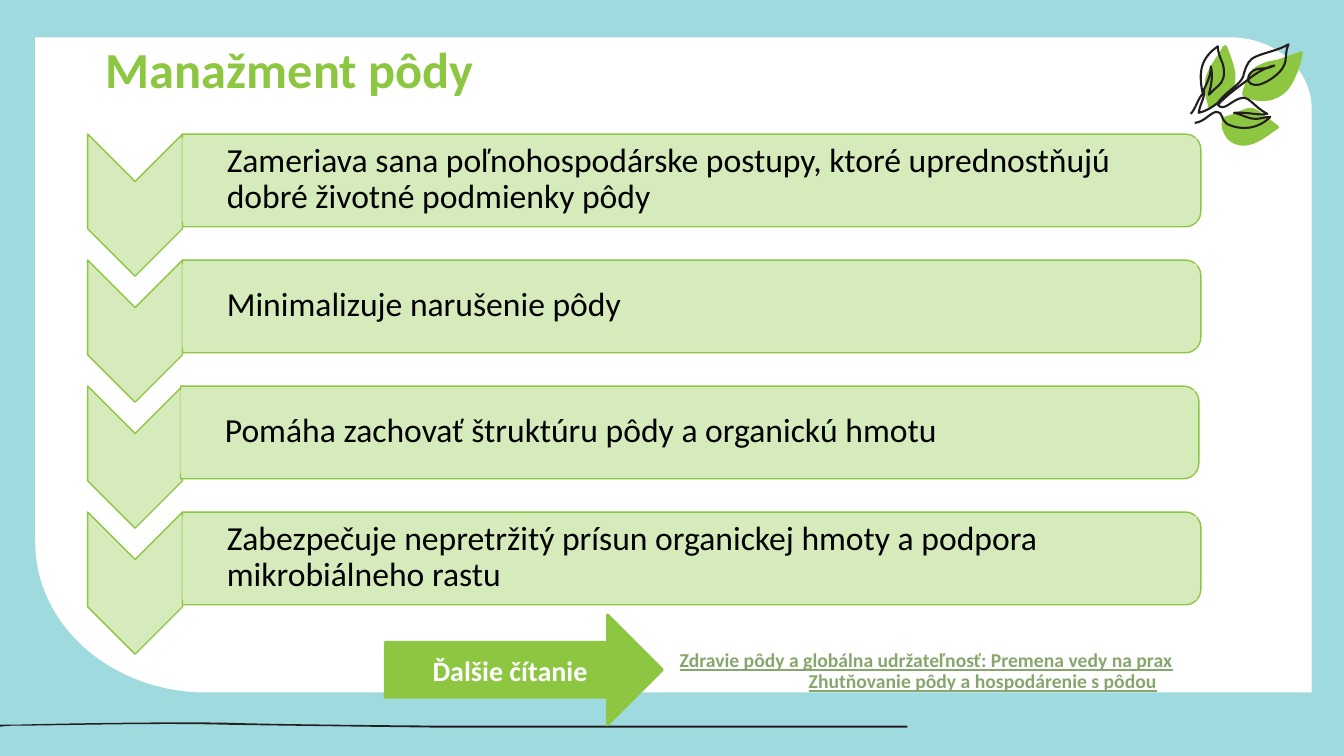
import pptx
import pptx.dml.color
import pptx.enum.shapes
import pptx.enum.text
import pptx.oxml.ns
import pptx.util
from dataclasses import dataclass
from lxml import etree

EMU_PER_PX = 9144
SHAPES = pptx.enum.shapes.MSO_SHAPE
ANCHOR = pptx.enum.text.MSO_ANCHOR
ALIGN = pptx.enum.text.PP_ALIGN


@dataclass(frozen=True)
class Theme:
    """Colours, font and type sizes of the slide."""
    sky: str = "9FDADF"
    paper: str = "FFFFFF"
    ink: str = "231F20"
    leaf: str = "8DC641"
    pale: str = "D6EBBB"
    text: str = "000000"
    link: str = "87A66E"
    font: str = "Calibri"
    title_size: int = 36
    step_size: int = 24
    arrow_size: int = 20
    link_size: int = 14
    stroke: float = 1.5


THEME = Theme()

PANEL = ((35, 37), [
    (1220, 37), (1265, 37, 1301, 69, 1301, 108), (1301, 687), (205, 687),
    (111, 687, 35, 620, 35, 538)])
WAVE = ((900, 722), [
    (443, 722), (441, 722, 280, 720, 223, 719), (155, 717, 52, 720, 14, 720),
    (6, 720, 1, 721, 0, 721), (0, 719), (1, 719, 6, 719, 14, 719),
    (52, 718, 155, 716, 223, 717), (281, 719, 441, 720, 443, 720), (900, 720)])
LEAVES = [
    ((1203, 106), [
        (1213, 101, 1224, 93, 1225, 82), (1227, 70, 1221, 57, 1217, 46),
        (1216, 44, 1214, 45, 1213, 46), (1210, 52, 1206, 57, 1203, 62),
        (1200, 66, 1198, 71, 1196, 76), (1194, 85, 1195, 95, 1198, 104),
        (1197, 106, 1198, 108, 1200, 107)]),
    ((1272, 94), [
        (1278, 90, 1282, 83, 1285, 76), (1288, 69, 1291, 61, 1292, 53),
        (1293, 51, 1291, 50, 1290, 51), (1283, 54, 1275, 56, 1268, 59),
        (1262, 60, 1255, 61, 1250, 64), (1244, 66, 1241, 70, 1238, 75),
        (1236, 81, 1233, 87, 1232, 93), (1232, 95, 1233, 96, 1234, 96),
        (1246, 102, 1261, 102, 1272, 94)]),
    ((1267, 128), [
        (1269, 127, 1269, 126, 1268, 125), (1263, 121, 1258, 117, 1252, 113),
        (1249, 110, 1245, 107, 1240, 107), (1236, 107, 1232, 109, 1228, 111),
        (1225, 112, 1221, 114, 1217, 115), (1214, 116, 1210, 117, 1212, 121),
        (1211, 124, 1212, 128, 1213, 130), (1215, 136, 1219, 141, 1225, 143),
        (1241, 149, 1255, 136, 1267, 128)]),
]
STEM = ((1181, 113), [
    (1186, 108, 1188, 98, 1193, 93), (1188, 70, 1192, 57, 1208, 46),
    (1208, 53, 1210, 55, 1211, 59), (1213, 63, 1214, 67, 1214, 72),
    (1214, 81, 1210, 84, 1204, 89), (1202, 91, 1201, 92, 1199, 94),
    (1202, 82, 1203, 74, 1201, 66), (1201, 74, 1198, 81, 1194, 89),
    (1196, 96, 1190, 103, 1189, 112), (1197, 110, 1203, 106, 1208, 102),
    (1218, 88, 1233, 84, 1234, 72), (1237, 63, 1239, 59, 1246, 56),
    (1255, 52, 1268, 50, 1278, 44), (1274, 53, 1277, 59, 1273, 66),
    (1270, 73, 1257, 82, 1249, 84), (1242, 85, 1238, 83, 1238, 78),
    (1239, 70, 1246, 68, 1252, 68), (1256, 68, 1260, 67, 1264, 65),
    (1255, 67, 1245, 73, 1238, 79), (1226, 88, 1216, 95, 1208, 104),
    (1214, 112, 1222, 98, 1233, 97), (1240, 97, 1245, 107, 1257, 113),
    (1247, 115, 1240, 111, 1224, 112), (1233, 114, 1238, 118, 1245, 118),
    (1250, 118, 1255, 116, 1260, 116), (1248, 128, 1232, 130, 1217, 123),
    (1211, 119, 1213, 111, 1207, 111), (1201, 111, 1195, 121, 1185, 122)])
STEPS = [
    ("Zameriava sana poľnohospodárske postupy, ktoré uprednostňujú dobré životné podmienky pôdy", 0),
    ("Minimalizuje narušenie pôdy", 0),
    ("Pomáha zachovať štruktúru pôdy a organickú hmotu", -2),
    ("Zabezpečuje nepretržitý prísun organickej hmoty a podpora mikrobiálneho rastu", 0),
]
LINKS = [
    ("Zdravie pôdy a globálna udržateľnosť: Premena vedy na prax", 25),
    ("Zhutňovanie pôdy a hospodárenie s pôdou", 153),
]


def px(length):
    """Turn pixels into EMU."""
    return pptx.util.Emu(round(length * EMU_PER_PX))


def rgb(colour):
    """Turn a hex string into a colour."""
    return pptx.dml.color.RGBColor.from_string(colour)


def paint(shape, fill=None, line=None, width=1):
    """Set fill and outline, leaving out what is not given."""
    shape.shadow.inherit = False
    if fill:
        shape.fill.solid()
        shape.fill.fore_color.rgb = rgb(fill)
    else:
        shape.fill.background()
    if line:
        shape.line.color.rgb = rgb(line)
        shape.line.width = pptx.util.Pt(width)
    else:
        shape.line.fill.background()


def draw_outline(slide, outline, fill=None, line=None):
    """Draw a freeform from line ends and cubic curves."""
    start, segments = outline
    points = [pair for segment in segments for pair in zip(segment[::2], segment[1::2])]
    builder = slide.shapes.build_freeform(*start, scale=EMU_PER_PX)
    builder.add_line_segments(points, close=fill is not None)
    shape = builder.convert_to_shape()
    lines = iter(list(shape.element.iter(pptx.oxml.ns.qn("a:lnTo"))))
    for segment in segments:
        parts = [next(lines) for _ in segment[::2]]
        if len(parts) == 3:
            curve = etree.Element(pptx.oxml.ns.qn("a:cubicBezTo"))
            parts[0].addprevious(curve)
            for part in parts:
                curve.append(part[0])
                part.getparent().remove(part)
    paint(shape, fill, line, THEME.stroke)


def add_preset(slide, kind, left, top, width, height, quarter_turn=False):
    """Add a preset shape that fills the box as seen, even when turned."""
    if quarter_turn:
        shift = (width - height) / 2
        left, top, width, height = left + shift, top - shift, height, width
    shape = slide.shapes.add_shape(kind, px(left), px(top), px(width), px(height))
    shape.rotation = 90 if quarter_turn else 0
    return shape


def set_frame(shape, anchor, insets):
    """Set wrapping, anchor and insets of a text frame."""
    frame = shape.text_frame
    frame.auto_size = pptx.enum.text.MSO_AUTO_SIZE.NONE
    frame.word_wrap = True
    frame.vertical_anchor = anchor
    frame.margin_left, frame.margin_top, frame.margin_right, frame.margin_bottom = map(px, insets)
    return frame


def style(paragraph, size, colour, bold=False, align=ALIGN.LEFT, spacing=0.9):
    """Format one paragraph."""
    paragraph.alignment = align
    paragraph.line_spacing = spacing
    paragraph.space_before = pptx.util.Pt(0)
    font = paragraph.font
    font.name, font.size, font.bold = THEME.font, pptx.util.Pt(size), bold
    font.color.rgb = rgb(colour)


def place(slide, placeholder, left, top, width, height):
    """Bring a placeholder to the front and into its box."""
    slide.shapes.element.append(placeholder.element)
    placeholder.left, placeholder.top = px(left), px(top)
    placeholder.width, placeholder.height = px(width), px(height)


def add_backdrop(slide):
    """Draw the background, the panel, the wave and the leaf ornament."""
    slide.background.fill.solid()
    slide.background.fill.fore_color.rgb = rgb(THEME.sky)
    draw_outline(slide, PANEL, fill=THEME.paper)
    draw_outline(slide, WAVE, fill=THEME.ink)
    for leaf in LEAVES:
        draw_outline(slide, leaf, fill=THEME.leaf)
    draw_outline(slide, STEM, line=THEME.ink)


def add_title(slide, left, top, width, height):
    """Place the slide title."""
    place(slide, slide.shapes.title, left, top, width, height)
    frame = set_frame(slide.shapes.title, ANCHOR.TOP, (10, 5, 10, 5))
    frame.text = "Manažment pôdy"
    style(frame.paragraphs[0], THEME.title_size, THEME.leaf, bold=True)


def add_step(slide, text, left, top, width, shift):
    """Draw one chevron with its bar and text."""
    chevron = add_preset(slide, SHAPES.CHEVRON, left, top, 94, 141, quarter_turn=True)
    bar_left, bar_width = left + 94 + shift, width - 94
    bar = add_preset(slide, SHAPES.ROUND_2_SAME_RECTANGLE, bar_left, top, bar_width, 92, quarter_turn=True)
    for shape in (chevron, bar):
        paint(shape, THEME.pale, THEME.leaf)
    label = add_preset(slide, SHAPES.RECTANGLE, bar_left, top + 4, bar_width - 4, 83)
    paint(label, THEME.pale)
    frame = set_frame(label, ANCHOR.MIDDLE, (44, 2, 2, 2))
    frame.text = text
    style(frame.paragraphs[0], THEME.step_size, THEME.text)


def add_links(slide, left, top, width, height):
    """List the further reading, each line at its own indent."""
    body = slide.placeholders[1]
    place(slide, body, left, top, width, height)
    frame = set_frame(body, ANCHOR.MIDDLE, (19, 2, 2, 2))
    frame.text = "\n".join(text for text, _ in LINKS)
    for paragraph, (_, margin) in zip(frame.paragraphs, LINKS):
        properties = paragraph._p.get_or_add_pPr()
        properties.set("marL", str(px(margin)))
        properties.set("indent", "0")
        etree.SubElement(properties, pptx.oxml.ns.qn("a:buNone"))
        style(paragraph, THEME.link_size, THEME.link, bold=True)
        paragraph.font.underline = True


def add_reading_arrow(slide, left, top, width, height):
    """Draw the arrow that points to the reading list."""
    arrow = add_preset(slide, SHAPES.RIGHT_ARROW, left, top, width, height)
    paint(arrow, THEME.leaf, THEME.leaf, 2)
    frame = set_frame(arrow, ANCHOR.MIDDLE, (10, 5, 10, 5))
    frame.text = "Ďalšie čítanie"
    style(frame.paragraphs[0], THEME.arrow_size, THEME.paper, bold=True, align=ALIGN.CENTER, spacing=1.0)


def main():
    """Build and save the presentation."""
    presentation = pptx.Presentation()
    presentation.slide_width, presentation.slide_height = px(1333), px(750)
    slide = presentation.slides.add_slide(presentation.slide_layouts[1])
    add_backdrop(slide)
    add_title(slide, 95, 40, 1159, 88)
    for row, (text, shift) in enumerate(STEPS):
        add_step(slide, text, 87, 133 + 125 * row, 1104, shift)
    add_links(slide, 630, 625, 703, 83)
    add_reading_arrow(slide, 382, 610, 275, 109)
    presentation.save("out.pptx")


if __name__ == "__main__":
    main()
